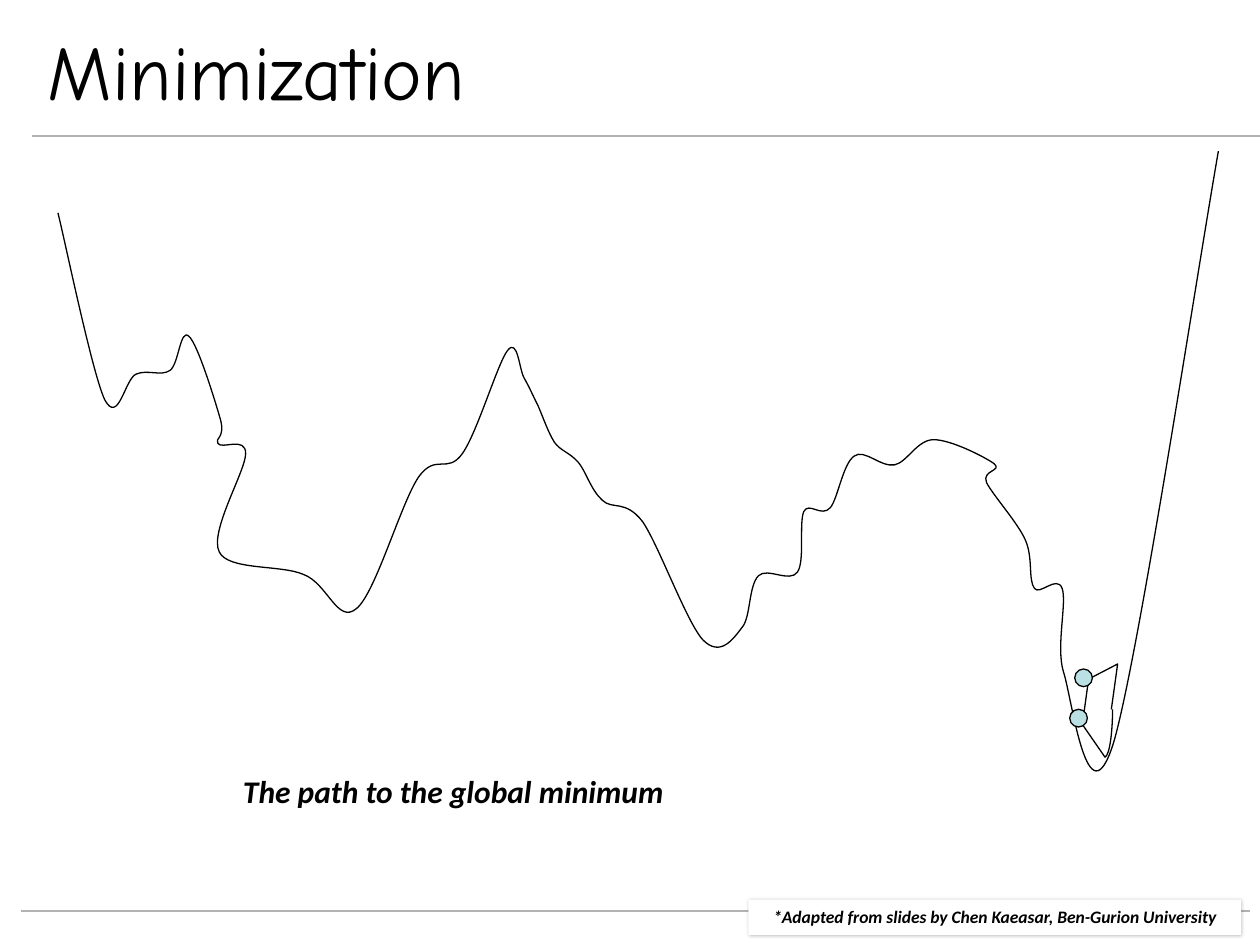
from lxml import etree
from pptx import Presentation
from pptx import util as u
from pptx.dml.color import RGBColor
from pptx.enum import shapes, text
from pptx.oxml.ns import qn

INK, RULE, ATOM, PAPER = "000000", "B2B2B2", "BBE0E3", "FFFFFF"

# Content: box is left, top, width, height
TITLE = ("Minimization", (0.28, 0.21, 9, 0.68))
CAPTION = ("The path to the global minimum", (1.83, 6.08, 4.58, 0.5))
CREDIT = ("*Adapted from slides by Chen Kaeasar, Ben-Gurion University",
          (5.94, 7.14, 3.91, 0.28))
TITLE_FONT = {"name": "Comic Neue", "size": u.Pt(44)}
CAPTION_FONT = {"name": "Calibri", "size": u.Pt(18), "bold": True, "italic": True}
CREDIT_FONT = {**CAPTION_FONT, "size": u.Pt(10)}

RULES = [(0.25, 1.08), (0.17, 7.23)]  # left end and height
RULE_LENGTH = 9.75

# Energy landscape: each row is two control points and the next node
LANDSCAPE_START = (0.46, 1.69)
LANDSCAPE = [
    (0.52, 1.93, 0.73, 2.95, 0.83, 3.17), (0.94, 3.38, 0.99, 3.01, 1.08, 2.97),
    (1.17, 2.93, 1.28, 2.99, 1.35, 2.94), (1.42, 2.89, 1.43, 2.6, 1.5, 2.67),
    (1.57, 2.73, 1.71, 3.19, 1.75, 3.33), (1.79, 3.48, 1.7, 3.48, 1.73, 3.52),
    (1.76, 3.57, 1.95, 3.46, 1.95, 3.6), (1.95, 3.74, 1.66, 4.22, 1.74, 4.38),
    (1.81, 4.53, 2.23, 4.48, 2.41, 4.56), (2.6, 4.63, 2.68, 4.96, 2.83, 4.83),
    (2.98, 4.71, 3.18, 4, 3.32, 3.79), (3.46, 3.59, 3.55, 3.77, 3.67, 3.6),
    (3.79, 3.43, 3.95, 2.88, 4.03, 2.78), (4.11, 2.68, 4.12, 2.93, 4.16, 3),
    (4.2, 3.07, 4.23, 3.14, 4.27, 3.22), (4.31, 3.31, 4.35, 3.43, 4.4, 3.51),
    (4.45, 3.58, 4.52, 3.59, 4.59, 3.67), (4.65, 3.74, 4.69, 3.89, 4.78, 3.97),
    (4.86, 4.05, 4.96, 3.96, 5.1, 4.14), (5.23, 4.33, 5.45, 4.94, 5.58, 5.08),
    (5.72, 5.22, 5.82, 5.07, 5.89, 4.98), (5.96, 4.9, 5.94, 4.65, 6.02, 4.57),
    (6.09, 4.5, 6.27, 4.63, 6.33, 4.54), (6.39, 4.45, 6.34, 4.15, 6.38, 4.06),
    (6.42, 3.98, 6.52, 4.11, 6.59, 4.03), (6.65, 3.96, 6.69, 3.68, 6.78, 3.62),
    (6.86, 3.56, 6.99, 3.71, 7.1, 3.69), (7.2, 3.67, 7.28, 3.49, 7.41, 3.49),
    (7.55, 3.49, 7.82, 3.63, 7.89, 3.68), (7.96, 3.74, 7.79, 3.73, 7.83, 3.83),
    (7.88, 3.93, 8.08, 4.15, 8.14, 4.29), (8.2, 4.43, 8.16, 4.6, 8.21, 4.67),
    (8.25, 4.73, 8.39, 4.56, 8.43, 4.67), (8.47, 4.78, 8.38, 5.13, 8.44, 5.33),
    (8.51, 5.54, 8.63, 6.57, 8.84, 5.89), (9.04, 5.2, 9.5, 2.17, 9.67, 1.2),
]

# Molecule at the global minimum
CHAIN_START = (8.83, 5.63)
CHAIN_CURVE = [(8.83, 5.79, 8.81, 5.99, 8.77, 6.01)]
CHAIN_BONDS = [(8.59, 5.75), (8.64, 5.39), (8.87, 5.27), (8.83, 5.56), (8.82, 5.63)]
ATOMS = [(8.49, 5.63), (8.53, 5.31)]
ATOM_SIZE = 0.14


def rgb(color):
    return RGBColor.from_string(color)


def inches(values):
    return [u.Inches(value) for value in values]


def outline(shape, color, width):
    shape.line.color.rgb = rgb(color)
    shape.line.width = u.Pt(width)


def add_path(parts, start, curves, bonds=()):
    """Draw Bezier curves, then straight bonds, as one open outline."""
    points = [row[i:i + 2] for row in curves for i in (0, 2, 4)] + list(bonds)
    builder = parts.build_freeform(*inches(start))
    builder.add_line_segments([inches(point) for point in points], close=False)
    shape = builder.convert_to_shape()
    shape.shadow.inherit = False
    shape.fill.background()
    outline(shape, INK, 0.75)
    # Join each run of three points into one cubic segment
    segments = list(shape._element.iter(qn("a:lnTo")))
    for i in range(0, 3 * len(curves), 3):
        cubic = etree.Element(qn("a:cubicBezTo"))
        segments[i].addprevious(cubic)
        for segment in segments[i:i + 3]:
            cubic.append(segment[0])
            segment.getparent().remove(segment)


def write(shape, words, font, anchor, align):
    frame = shape.text_frame
    frame.word_wrap = True
    frame.vertical_anchor = anchor
    paragraph = frame.paragraphs[0]
    paragraph.alignment = align
    run = paragraph.add_run()
    run.text = words
    for key, value in font.items():
        setattr(run.font, key, value)
    run.font.color.rgb = rgb(INK)


prs = Presentation()
prs.slide_width, prs.slide_height = inches((10, 7.5))
slide = prs.slides.add_slide(prs.slide_layouts[6])
parts = slide.shapes

# Rules
for left, y in RULES:
    rule = parts.add_connector(shapes.MSO_CONNECTOR.STRAIGHT,
                               *inches((left, y, left + RULE_LENGTH, y)))
    outline(rule, RULE, 1.5)
    etree.SubElement(rule._element.spPr, qn("a:effectLst"))

# Landscape and molecule
add_path(parts, LANDSCAPE_START, LANDSCAPE)
molecule = parts.add_group_shape().shapes
add_path(molecule, CHAIN_START, CHAIN_CURVE, CHAIN_BONDS)
for left, top in ATOMS:
    atom = molecule.add_shape(shapes.MSO_SHAPE.OVAL,
                              *inches((left, top, ATOM_SIZE, ATOM_SIZE)))
    atom.shadow.inherit = False
    atom.fill.solid()
    atom.fill.fore_color.rgb = rgb(ATOM)
    outline(atom, INK, 0.75)

# Caption
words, box = CAPTION
write(parts.add_textbox(*inches(box)), words, CAPTION_FONT,
      text.MSO_ANCHOR.TOP, text.PP_ALIGN.LEFT)

# Credit panel with a soft shadow
words, box = CREDIT
credit = parts.add_shape(shapes.MSO_SHAPE.RECTANGLE, *inches(box))
credit.fill.solid()
credit.fill.fore_color.rgb = rgb(PAPER)
credit.line.fill.background()
credit.shadow.inherit = False
shadow = etree.SubElement(credit._element.spPr.find(qn("a:effectLst")),
                          qn("a:outerShdw"), blurRad="25000", dist="5000",
                          dir="5400000", rotWithShape="0")
shade = etree.SubElement(shadow, qn("a:srgbClr"), val=INK)
etree.SubElement(shade, qn("a:alpha"), val="25000")
write(credit, words, CREDIT_FONT, text.MSO_ANCHOR.TOP, text.PP_ALIGN.CENTER)

# Title
words, box = TITLE
write(parts.add_textbox(*inches(box)), words, TITLE_FONT,
      text.MSO_ANCHOR.MIDDLE, text.PP_ALIGN.LEFT)

prs.save("out.pptx")
